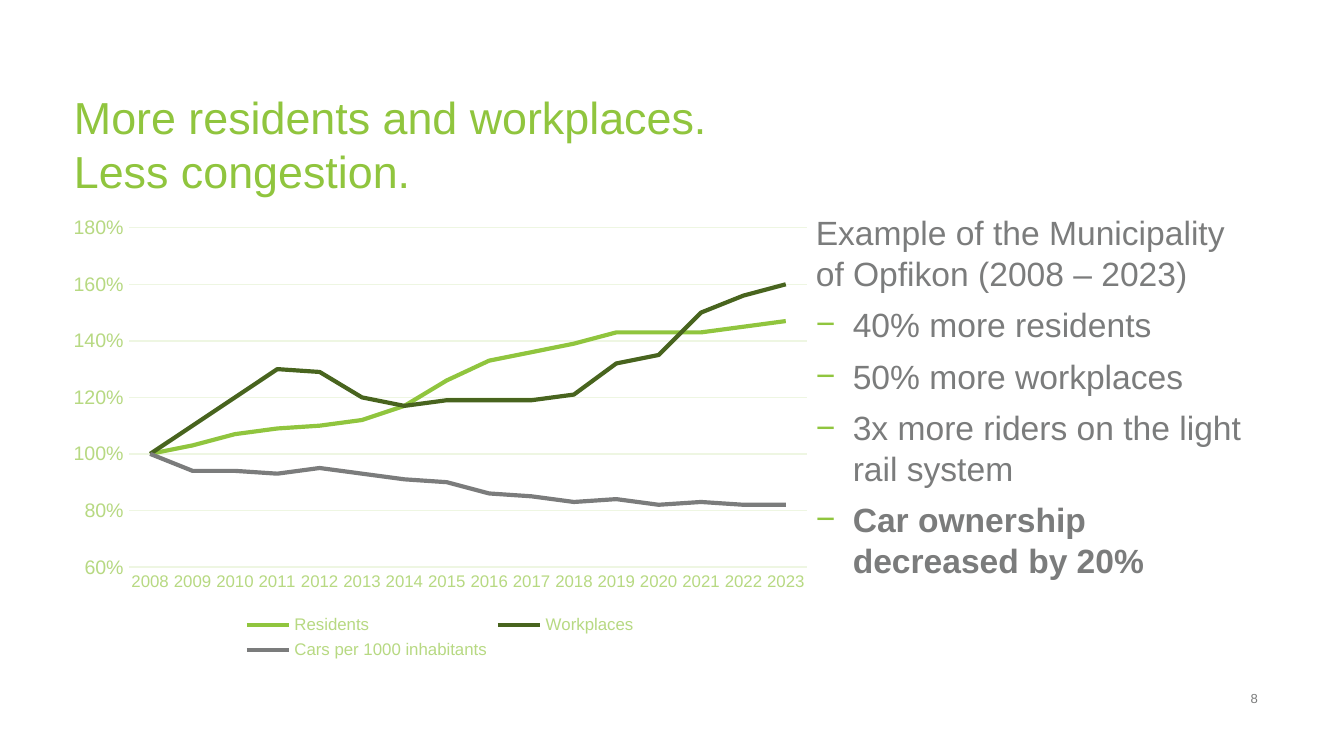
from lxml import etree
from pptx import Presentation
from pptx.chart.data import CategoryChartData
from pptx.dml.color import RGBColor
from pptx.enum.chart import XL_CHART_TYPE, XL_LEGEND_POSITION, XL_TICK_MARK
from pptx.enum.text import MSO_ANCHOR, PP_ALIGN
from pptx.oxml import parse_xml
from pptx.oxml.ns import nsdecls, qn
from pptx.util import Pt

LINE_CHART = XL_CHART_TYPE.LINE
LEGEND_BOTTOM = XL_LEGEND_POSITION.BOTTOM
NO_TICK = XL_TICK_MARK.NONE
TOP = MSO_ANCHOR.TOP
LEFT, RIGHT = PP_ALIGN.LEFT, PP_ALIGN.RIGHT

PX = 4572  # 200 px to the inch
FONT = "Arial"
COLORS = {
    "green": "90C53E",
    "pale": "B7D982",
    "grid": "EEF6E2",
    "dark": "48641E",
    "grey": "7B7C7C",
}

YEARS = [str(year) for year in range(2008, 2024)]
SERIES = [
    ("Residents", "green", [1, 1.03, 1.07, 1.09, 1.1, 1.12, 1.17, 1.26,
                            1.33, 1.36, 1.39, 1.43, 1.43, 1.43, 1.45, 1.47]),
    ("Workplaces", "dark", [1, 1.1, 1.2, 1.3, 1.29, 1.2, 1.17, 1.19,
                            1.19, 1.19, 1.21, 1.32, 1.35, 1.5, 1.56, 1.6]),
    ("Cars per 1000 inhabitants", "grey",
     [1, 0.94, 0.94, 0.93, 0.95, 0.93, 0.91, 0.9,
      0.86, 0.85, 0.83, 0.84, 0.82, 0.83, 0.82, 0.82]),
]
FINDINGS = [
    "40% more residents",
    "50% more workplaces",
    "3x more riders on the light rail system",
    "Car ownership decreased by 20%",
]


def color(name):
    return RGBColor.from_string(COLORS[name])


def scaled(box):
    return [length * PX for length in box]


def style_font(font, size, color_name, bold=False):
    font.name = FONT
    font.size = Pt(size)
    font.bold = bold
    font.color.rgb = color(color_name)


def style_line(line, color_name, width):
    line.color.rgb = color(color_name)
    line.width = Pt(width)


def prepare_frame(frame):
    frame.word_wrap = True
    frame.vertical_anchor = TOP
    frame.margin_left = frame.margin_right = 0
    frame.margin_top = frame.margin_bottom = 0


def write(para, text, size, color_name, align=LEFT, bold=False):
    para.text = text
    para.alignment = align
    para.line_spacing = 1.0
    para.space_before = Pt(0)
    for span in para.runs:
        style_font(span.font, size, color_name, bold)


def add_dash(para, indent):
    props = para._p.get_or_add_pPr()
    props.set("marL", str(indent * PX))
    props.set("indent", str(-indent * PX))
    bullet_color = etree.SubElement(props, qn("a:buClr"))
    etree.SubElement(bullet_color, qn("a:srgbClr"), val=COLORS["green"])
    etree.SubElement(props, qn("a:buFont"), typeface=FONT)
    etree.SubElement(props, qn("a:buChar"), char="−")


def place_title(page, box):
    title = page.shapes.title
    title.left, title.top, title.width, title.height = scaled(box)
    prepare_frame(title.text_frame)
    write(title.text_frame.paragraphs[0],
          "More residents and workplaces.\vLess congestion.", 24, "green")


def place_findings(page, box):
    frame = page.shapes.add_textbox(*scaled(box)).text_frame
    prepare_frame(frame)
    intro = frame.paragraphs[0]
    write(intro, "Example of the Municipality of Opfikon (2008 – 2023)", 18, "grey")
    intro.space_after = Pt(6)
    for finding in FINDINGS:
        para = frame.add_paragraph()
        write(para, finding, 18, "grey", bold=finding == FINDINGS[-1])
        para.space_after = Pt(6)
        add_dash(para, 55)


def place_page_number(page, box):
    frame = page.shapes.add_textbox(*scaled(box)).text_frame
    prepare_frame(frame)
    write(frame.paragraphs[0], "8", 7, "grey", RIGHT)


def set_layout(part, box, chart_width, chart_height, inner=False):
    """Fix a chart part at a box measured from the chart's corner."""
    left, top, width, height = box
    for old in part.findall(qn("c:layout")):
        part.remove(old)
    target = '<c:layoutTarget val="inner"/>' if inner else ""
    layout = parse_xml(
        f'<c:layout {nsdecls("c")}><c:manualLayout>{target}'
        '<c:xMode val="edge"/><c:yMode val="edge"/>'
        f'<c:x val="{left / chart_width}"/><c:y val="{top / chart_height}"/>'
        f'<c:w val="{width / chart_width}"/><c:h val="{height / chart_height}"/>'
        "</c:manualLayout></c:layout>")
    position = part.find(qn("c:legendPos"))
    part.insert(0 if position is None else part.index(position) + 1, layout)


def place_chart(page, box):
    data = CategoryChartData(number_format="0%")
    data.categories = YEARS
    for name, _, values in SERIES:
        data.add_series(name, values)
    chart = page.shapes.add_chart(LINE_CHART, *scaled(box), data).chart
    chart.has_title = False
    style_font(chart.font, 10, "green")

    # Lines
    plot = chart.plots[0]
    plot.vary_by_categories = False
    for series, (_, color_name, _) in zip(plot.series, SERIES):
        series.smooth = False
        style_line(series.format.line, color_name, 2.25)

    # Axes
    years, share = chart.category_axis, chart.value_axis
    for axis, size in ((years, 9), (share, 10.5)):
        axis.major_tick_mark = axis.minor_tick_mark = NO_TICK
        style_font(axis.tick_labels.font, size, "pale")
    style_line(years.format.line, "grid", 0.75)
    share.format.line.fill.background()
    share.minimum_scale, share.maximum_scale, share.major_unit = 0.6, 1.8, 0.2
    share.tick_labels.number_format = "0%"
    share.tick_labels.number_format_is_linked = False
    style_line(share.major_gridlines.format.line, "grid", 0.75)

    # Legend and plot area
    chart.has_legend = True
    chart.legend.position = LEGEND_BOTTOM
    chart.legend.include_in_layout = False
    style_font(chart.legend.font, 9, "pale")
    size = box[2:]
    set_layout(chart.legend._element, (273, 600, 592, 82), *size)
    plot_area = chart._chartSpace.find(qn("c:chart")).find(qn("c:plotArea"))
    set_layout(plot_area, (106, 31, 1009, 505), *size, inner=True)


def main():
    deck = Presentation()
    deck.slide_width, deck.slide_height = 2000 * PX, 1125 * PX
    page = deck.slides.add_slide(deck.slide_layouts[5])
    place_page_number(page, (1826, 1028, 46, 26))
    place_findings(page, (1214, 316, 658, 662))
    place_title(page, (110, 134, 1764, 174))
    place_chart(page, (86, 308, 1138, 682))
    deck.save("out.pptx")


if __name__ == "__main__":
    main()
